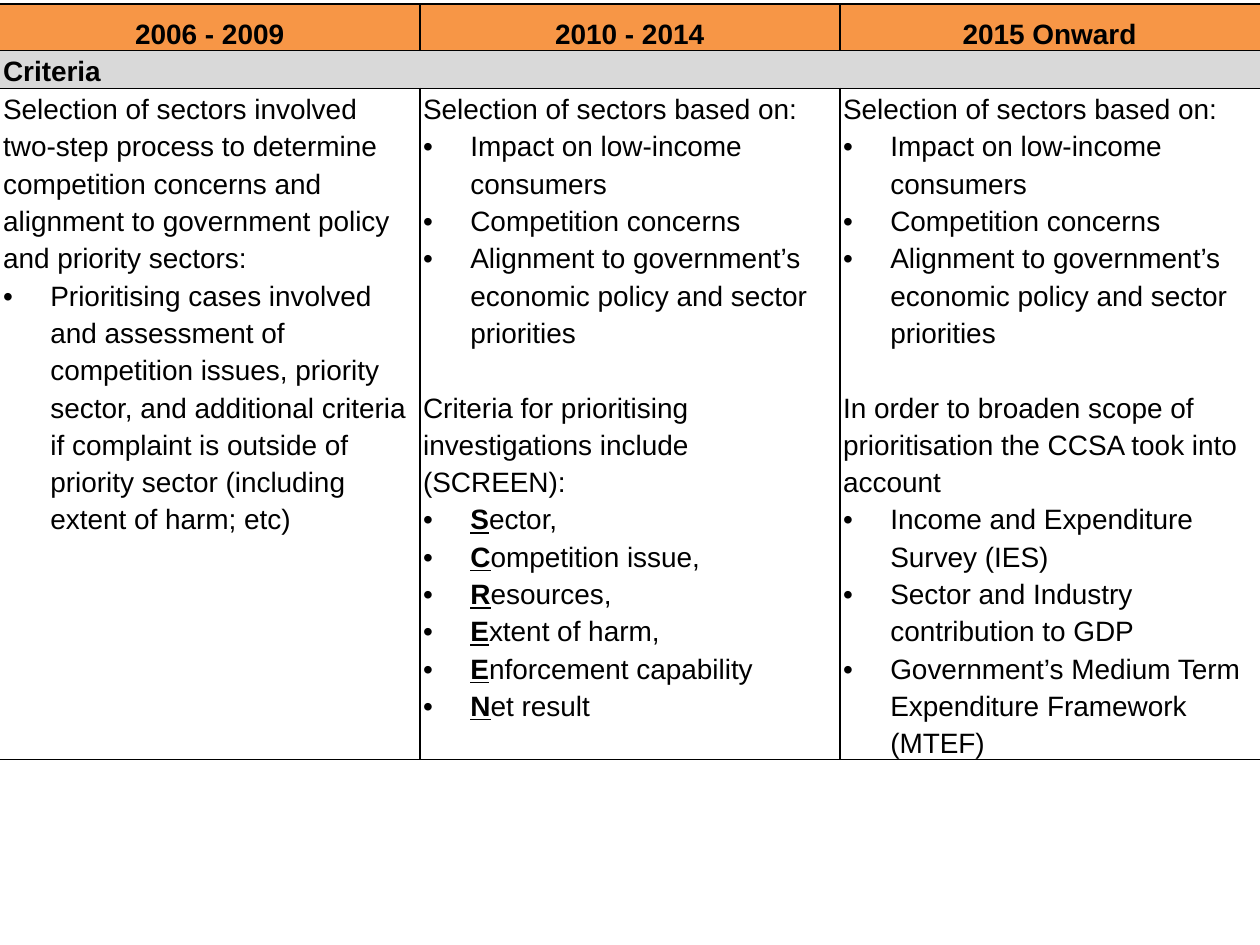
from dataclasses import dataclass

from lxml.etree import SubElement
from pptx import Presentation
from pptx.dml.color import RGBColor
from pptx.enum.text import MSO_ANCHOR, PP_ALIGN
from pptx.oxml import parse_xml
from pptx.oxml.ns import nsdecls, qn
from pptx.util import Inches, Pt

BLACK = RGBColor(0x00, 0x00, 0x00)
ORANGE = RGBColor(0xF7, 0x96, 0x46)
GREY = RGBColor(0xD9, 0xD9, 0xD9)

FONT = {"name": "Arial", "size": Pt(16)}
MARGINS = {"margin_left": Pt(1.8), "margin_right": Inches(0.03),
           "margin_top": 0, "margin_bottom": 0}
BULLET_INDENT = Inches(0.375)
LINE_SPACING = 1.2
SECTION_GAP = Pt(21.3)
ROW_HEIGHTS = (0.37, 0.3, 5.32)


@dataclass(frozen=True)
class Line:
    text: str
    bullet: bool = False
    initial: bool = False  # first letter bold and underlined
    gap: bool = False  # starts a new section


@dataclass(frozen=True)
class Period:
    heading: str
    lines: list[Line]


def bullets(*texts: str, initial: bool = False) -> list[Line]:
    return [Line(text, bullet=True, initial=initial) for text in texts]


SELECTION = [
    Line("Selection of sectors based on:"),
    *bullets("Impact on low-income consumers", "Competition concerns",
             "Alignment to government’s economic policy and sector priorities"),
]
PERIODS = [
    Period("2006 - 2009", [
        Line("Selection of sectors involved two-step process to determine competition "
             "concerns and alignment to government policy and priority sectors:"),
        *bullets("Prioritising cases involved and assessment of competition issues, "
                 "priority sector, and additional criteria if complaint is outside of "
                 "priority sector (including extent of harm; etc)"),
    ]),
    Period("2010 - 2014", [
        *SELECTION,
        Line("Criteria for prioritising investigations include (SCREEN):", gap=True),
        *bullets("Sector,", "Competition issue,", "Resources,", "Extent of harm,",
                 "Enforcement capability", "Net result", initial=True),
    ]),
    Period("2015 Onward", [
        *SELECTION,
        Line("In order to broaden scope of prioritisation the CCSA took into account",
             gap=True),
        *bullets("Income and Expenditure Survey (IES)",
                 "Sector and Industry contribution to GDP",
                 "Government’s Medium Term Expenditure Framework (MTEF)"),
    ]),
]


def set_attributes(target, values: dict) -> None:
    for name, value in values.items():
        setattr(target, name, value)


def add_run(paragraph, text: str, bold: bool = False, underline: bool = False) -> None:
    run = paragraph.add_run()
    run.text = text
    set_attributes(run.font, FONT | {"bold": bold, "underline": underline})
    run.font.color.rgb = BLACK


def add_bullet(paragraph) -> None:
    properties = paragraph._p.get_or_add_pPr()
    properties.set("marL", str(BULLET_INDENT))
    properties.set("indent", str(-BULLET_INDENT))
    SubElement(properties, qn("a:buFont")).set("typeface", "Arial")
    SubElement(properties, qn("a:buChar")).set("char", "•")


def format_cell(cell, left: bool, right: bool, fill: RGBColor | None = None) -> None:
    """Set margins, fill and borders; left and right tell which sides are ruled."""
    set_attributes(cell, MARGINS | {"vertical_anchor": MSO_ANCHOR.TOP})
    if fill is None:
        cell.fill.background()
    else:
        cell.fill.solid()
        cell.fill.fore_color.rgb = fill
    visible = {"L": left, "R": right, "T": True, "B": True}
    properties = cell._tc.get_or_add_tcPr()
    for position, (side, shown) in enumerate(visible.items()):
        paint = (f'<a:solidFill><a:srgbClr val="{BLACK}"/></a:solidFill>'
                 if shown else "<a:noFill/>")
        properties.insert(position, parse_xml(
            f'<a:ln{side} {nsdecls("a")} w="{Pt(1)}">{paint}</a:ln{side}>'))


def write_heading(cell, text: str, spacing: float, alignment: PP_ALIGN) -> None:
    paragraph = cell.text_frame.paragraphs[0]
    set_attributes(paragraph, {"line_spacing": spacing, "alignment": alignment})
    add_run(paragraph, text, bold=True)


def write_lines(cell, lines: list[Line]) -> None:
    frame = cell.text_frame
    for index, line in enumerate(lines):
        paragraph = frame.add_paragraph() if index else frame.paragraphs[0]
        paragraph.line_spacing = LINE_SPACING
        if line.gap:
            paragraph.space_before = SECTION_GAP
        if line.bullet:
            add_bullet(paragraph)
        if line.initial:
            add_run(paragraph, line.text[0], bold=True, underline=True)
            add_run(paragraph, line.text[1:])
        else:
            add_run(paragraph, line.text)


def main() -> None:
    presentation = Presentation()
    presentation.slide_width, presentation.slide_height = Inches(10), Inches(7.5)
    slide = presentation.slides.add_slide(presentation.slide_layouts[6])

    # Table grid
    table = slide.shapes.add_table(
        len(ROW_HEIGHTS), len(PERIODS), 0, Inches(0.03),
        Inches(10), Inches(sum(ROW_HEIGHTS))).table
    table.horz_banding = False
    table.first_row = False
    for row, height in zip(table.rows, ROW_HEIGHTS):
        row.height = Inches(height)

    # One column for each period, open at the table's outer sides
    last = len(PERIODS) - 1
    for column, period in enumerate(PERIODS):
        heading, band, body = (table.cell(row, column) for row in range(3))
        left, right = column > 0, column < last
        format_cell(heading, left, right, ORANGE)
        format_cell(band, False, False, GREY)
        format_cell(body, left, right)
        write_heading(heading, period.heading, 1.5, PP_ALIGN.CENTER)
        write_lines(body, period.lines)

    # Criteria band across all periods
    criteria = table.cell(1, 0)
    criteria.merge(table.cell(1, last))
    write_heading(criteria, "Criteria", LINE_SPACING, PP_ALIGN.LEFT)

    presentation.save("out.pptx")


if __name__ == "__main__":
    main()
